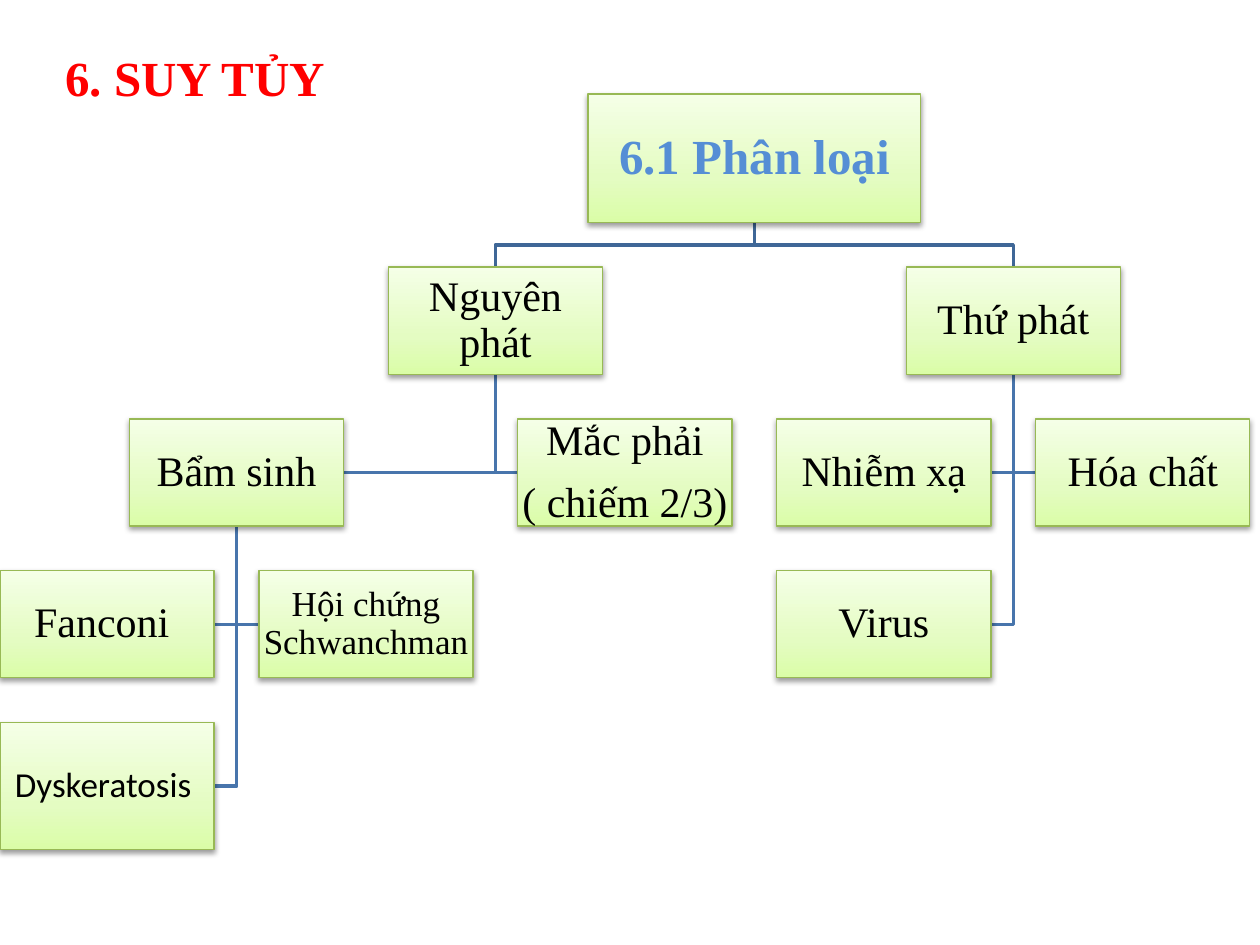
from dataclasses import dataclass

from lxml.etree import fromstring
from pptx import Presentation
from pptx.dml.color import RGBColor as RGB
from pptx.enum.shapes import MSO_SHAPE as Kind
from pptx.enum.text import MSO_ANCHOR as Anchor, PP_ALIGN as Align
from pptx.oxml.ns import nsdecls
from pptx.util import Emu, Inches, Pt

HUES = {"text": "000000", "title": "FF0000", "root": "558ED5", "edge": "98B955",
        "fork": "3F6797", "hang": "4875AC",
        "low": "DAFDA7", "mid": "E4FCC2", "high": "F5FFE7"}

# Grid: boxes sit on half-box columns and on evenly spaced rows
COL, ROW, TOP = 1.0275, 1.205, 2.12
WIDE, HIGH = 1.7, 0.85

GRAD = f"""<a:gradFill {nsdecls('a')} rotWithShape="1"><a:gsLst>
<a:gs pos="0"><a:srgbClr val="{HUES['low']}"/></a:gs>
<a:gs pos="35000"><a:srgbClr val="{HUES['mid']}"/></a:gs>
<a:gs pos="100000"><a:srgbClr val="{HUES['high']}"/></a:gs>
</a:gsLst><a:lin ang="16200000" scaled="1"/></a:gradFill>"""
SHADE = f"""<a:effectLst {nsdecls('a')}>
<a:outerShdw blurRad="40000" dist="20000" dir="5400000" rotWithShape="0">
<a:srgbClr val="000000"><a:alpha val="38000"/></a:srgbClr>
</a:outerShdw></a:effectLst>"""


@dataclass
class Node:
    text: str
    col: float
    row: float
    size: int = 24
    wide: float = WIDE
    high: float = HIGH
    font: str = "Times New Roman"
    hue: str = "text"
    bold: bool = False
    pad: float = 0.02

    @property
    def mid(self) -> float:
        return self.col * COL + WIDE / 2

    @property
    def left(self) -> float:
        return self.mid - self.wide / 2

    @property
    def top(self) -> float:
        return TOP + self.row * ROW

    @property
    def base(self) -> float:
        return self.top + self.high


NODES = {
    "root": Node("6.1 Phân loại", 5, -1.14, 28, 2.64, 1.02, hue="root", bold=True),
    "first": Node("Nguyên phát", 3, 0),
    "born": Node("Bẩm sinh", 1, 1),
    "fan": Node("Fanconi ", 0, 2),
    "schwan": Node("Hội chứng Schwanchman", 2, 2, 20, pad=0.01),
    "dys": Node("Dyskeratosis ", 0, 3, 20, high=1.01, font="Calibri", pad=0.01),
    "got": Node("Mắc phải\n( chiếm 2/3) ", 4, 1),
    "next": Node("Thứ phát", 7, 0),
    "ray": Node("Nhiễm xạ", 6, 1),
    "chem": Node("Hóa chất", 8, 1),
    "virus": Node("Virus", 6, 2),
}
TREE = {"root": ["next", "first"], "next": ["virus", "chem", "ray"],
        "first": ["got", "born"], "born": ["dys", "schwan", "fan"]}


def write(frame, text: str, *, size: int, font: str = "Times New Roman",
          hue: str = "text", bold: bool = False, align=Align.LEFT,
          lead: float = 1, after: float = 0) -> None:
    frame.word_wrap = True
    for i, line in enumerate(text.split("\n")):
        para = frame.add_paragraph() if i else frame.paragraphs[0]
        para.alignment, para.line_spacing = align, lead
        para.space_after = Pt(after)
        run = para.add_run()
        run.text = line
        face = run.font
        face.name, face.size, face.bold = font, Pt(size), bold
        face.color.rgb = RGB.from_string(HUES[hue])


def link(shapes, boss: Node, kid: Node, fork: bool) -> None:
    """Draw the bent line from a box to one below it."""
    if fork:
        bend = (boss.base + kid.top) / 2
        ends = [(boss.mid, bend), (kid.mid, bend), (kid.mid, kid.top)]
    else:
        level = kid.top + kid.high / 2
        side = kid.left if kid.mid > boss.mid else kid.left + kid.wide
        ends = [(boss.mid, level), (side, level)]
    pen = shapes.build_freeform(Inches(boss.mid), Inches(boss.base))
    pen.add_line_segments([(Inches(x), Inches(y)) for x, y in ends], close=False)
    line = pen.convert_to_shape()
    line.fill.background()
    line.shadow.inherit = False
    line.line.width = Pt(2)
    line.line.color.rgb = RGB.from_string(HUES["fork" if fork else "hang"])


def draw(shapes, node: Node) -> None:
    area = map(Inches, (node.left, node.top, node.wide, node.high))
    box = shapes.add_shape(Kind.RECTANGLE, *area)
    box.line.width = Pt(0.75)
    box.line.color.rgb = RGB.from_string(HUES["edge"])
    props = box.element.spPr
    props.insert(2, fromstring(GRAD))
    props.append(fromstring(SHADE))
    frame = box.text_frame
    frame.vertical_anchor = Anchor.MIDDLE
    frame.margin_left = frame.margin_right = Inches(node.pad)
    frame.margin_top = frame.margin_bottom = Inches(node.pad)
    write(frame, node.text, size=node.size, font=node.font, hue=node.hue,
          bold=node.bold, align=Align.CENTER, lead=0.9, after=0.4 * node.size)


def main() -> None:
    deck = Presentation()
    deck.slide_width, deck.slide_height = Inches(10), Inches(7.5)
    shapes = deck.slides.add_slide(deck.slide_layouts[6]).shapes

    # Lines lie behind the boxes
    for boss, kids in TREE.items():
        for kid in kids:
            link(shapes, NODES[boss], NODES[kid], fork=boss == "root")
    for node in NODES.values():
        draw(shapes, node)

    # Title
    wide, high = deck.slide_width, deck.slide_height
    title = shapes.add_textbox(Emu(int(wide * 0.042)), Emu(int(high * 0.044)),
                               Emu(int(wide * 0.4)), Emu(int(high * 0.076)))
    write(title.text_frame, "6. SUY TỦY", size=28, hue="title", bold=True)

    deck.save("out.pptx")


if __name__ == "__main__":
    main()
